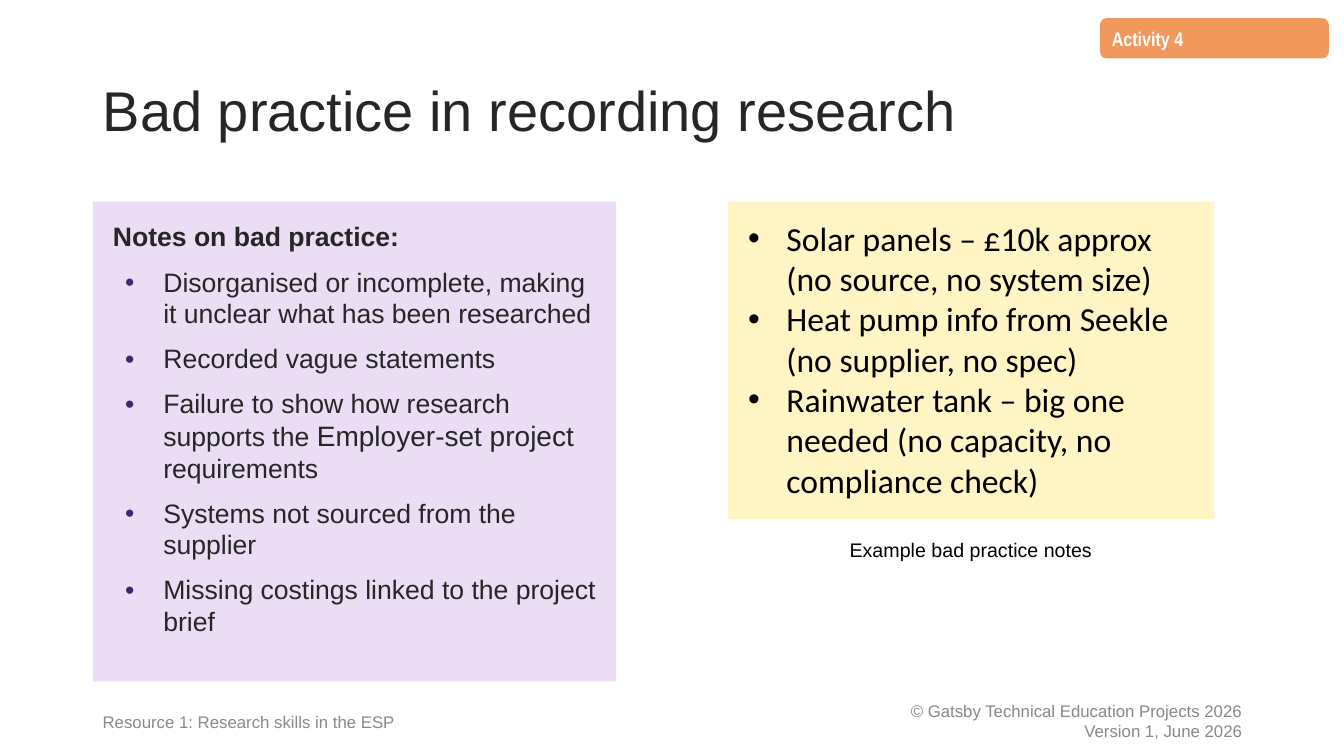
import lxml.etree
import pptx
import pptx.dml.color
import pptx.enum.shapes
import pptx.enum.text
import pptx.oxml.ns
import pptx.util

RGBColor = pptx.dml.color.RGBColor
Align = pptx.enum.text.PP_ALIGN
Anchor = pptx.enum.text.MSO_ANCHOR
Shape = pptx.enum.shapes.MSO_SHAPE

INK = RGBColor(0x26, 0x26, 0x26)
BLACK = RGBColor(0x00, 0x00, 0x00)
WHITE = RGBColor(0xFF, 0xFF, 0xFF)
GREY = RGBColor(0x88, 0x88, 0x88)
FOOTER_GREY = RGBColor(0x89, 0x89, 0x89)
LILAC = RGBColor(0xEB, 0xDD, 0xF4)
PURPLE = RGBColor(0x43, 0x26, 0x73)
ORANGE = RGBColor(0xF1, 0x99, 0x5D)
YELLOW = RGBColor(0xFF, 0xF5, 0xC4)

BAD_PRACTICE = [
    ["Disorganised or incomplete, making it unclear what has been researched"],
    ["Recorded vague statements"],
    ["Failure to show how research supports the ", "Employer-set project", " requirements"],
    ["Systems not sourced from the supplier"],
    ["Missing costings linked to the project brief"],
]
EXAMPLES = [
    "Solar panels – £10k approx (no source, no system size)",
    "Heat pump info from Seekle (no supplier, no spec)",
    "Rainwater tank – big one needed (no capacity, no compliance check)",
]


def px(count):
    """Turn whole pixels, 100 to the inch, into EMU."""
    return pptx.util.Emu(count * 9144)


class SlideBuilder:
    """Holds the text style and the slide being filled."""

    def __init__(self, slide, font="Arial"):
        """Keep the slide and its main font."""
        self.slide = slide
        self.font = font

    def place(self, box, left, top, width, height):
        """Set the position and size of a box."""
        box.left, box.top, box.width, box.height = map(px, (left, top, width, height))

    def frame(self, box, anchor=Anchor.TOP, inset=(10, 5)):
        """Set wrapping, anchor and insets of a box and return its text frame."""
        frame = box.text_frame
        frame.word_wrap = True
        frame.auto_size = pptx.enum.text.MSO_AUTO_SIZE.NONE
        frame.vertical_anchor = anchor
        frame.margin_left = frame.margin_right = px(inset[0])
        frame.margin_top = frame.margin_bottom = px(inset[1])
        return frame

    def format(self, para, size, color, bold=False, align=Align.LEFT, line=1.0, before=0, font=None):
        """Format one paragraph and its runs."""
        para.alignment = align
        para.line_spacing = line
        para.space_before = pptx.util.Pt(before)
        for span in para.runs:
            span.font.name = font or self.font
            span.font.size = pptx.util.Pt(size)
            span.font.bold = bold
            span.font.color.rgb = color

    def bullet(self, para, color=None, left=0, hanging=0):
        """Give a paragraph a coloured bullet, or none without a colour."""
        props = para._p.get_or_add_pPr()
        props.set("marL", str(px(left)))
        props.set("indent", str(px(-hanging)))
        name = pptx.oxml.ns.qn
        if color is None:
            lxml.etree.SubElement(props, name("a:buNone"))
            return
        paint = lxml.etree.SubElement(props, name("a:buClr"))
        lxml.etree.SubElement(paint, name("a:srgbClr"), val=str(color))
        lxml.etree.SubElement(props, name("a:buFont"), typeface="Arial")
        lxml.etree.SubElement(props, name("a:buChar"), char="•")

    def title(self, text, bounds):
        """Fill the title placeholder."""
        box = self.slide.shapes.title
        self.place(box, *bounds)
        frame = self.frame(box, Anchor.MIDDLE)
        frame.text = text
        self.format(frame.paragraphs[0], 40, INK, line=0.9)

    def body(self, heading, items, bounds):
        """Fill the body placeholder with a heading and a bulleted list."""
        box = self.slide.placeholders[1]
        self.place(box, *bounds)
        box.fill.solid()
        box.fill.fore_color.rgb = LILAC
        frame = self.frame(box, inset=(20, 20))
        frame.text = heading
        self.bullet(frame.paragraphs[0])
        self.format(frame.paragraphs[0], 19, INK, bold=True, line=0.98)
        for parts in items:
            para = frame.add_paragraph()
            for part in parts:
                para.add_run().text = part
            self.bullet(para, PURPLE, 50, 38)
            self.format(para, 19, INK, line=0.98, before=10)
            for emphasis in para.runs[1:2]:
                emphasis.font.size = pptx.util.Pt(20)

    def panel(self, kind, fill, bounds, inset=(10, 5)):
        """Add a filled shape and return its text frame."""
        box = self.slide.shapes.add_shape(kind, *map(px, bounds))
        box.shadow.inherit = False
        box.fill.solid()
        box.fill.fore_color.rgb = fill
        box.line.fill.background()
        return self.frame(box, inset=inset)

    def tab(self, text, bounds):
        """Add the activity tab."""
        frame = self.panel(Shape.FLOWCHART_ALTERNATE_PROCESS, ORANGE, bounds)
        frame.text = text
        self.format(frame.paragraphs[0], 14, WHITE, bold=True, line=1.08, font="Arial Narrow")

    def card(self, items, bounds):
        """Add the card of bulleted examples."""
        frame = self.panel(Shape.RECTANGLE, YELLOW, bounds, (20, 16))
        frame.text = "\n".join(items)
        for para in frame.paragraphs:
            self.bullet(para, BLACK, 38, 38)
            self.format(para, 24, BLACK, font="Calibri")

    def label(self, text, bounds, size, color, anchor=Anchor.MIDDLE, **style):
        """Add a text box with one paragraph per line."""
        box = self.slide.shapes.add_textbox(*map(px, bounds))
        frame = self.frame(box, anchor)
        frame.text = text
        for para in frame.paragraphs:
            self.format(para, size, color, **style)


def main():
    """Build the slide and save the deck."""
    deck = pptx.Presentation()
    deck.slide_width, deck.slide_height = px(1333), px(750)
    page = SlideBuilder(deck.slides.add_slide(deck.slide_layouts[1]))
    page.title("Bad practice in recording research", (92, 40, 1150, 145))
    page.body("Notes on bad practice:", BAD_PRACTICE, (92, 200, 519, 476))
    page.tab("Activity 4", (1091, 18, 227, 40))
    page.card(EXAMPLES, (722, 200, 482, 315))
    page.label("Example bad practice notes", (825, 529, 276, 34), 14, BLACK,
               Anchor.TOP, align=Align.CENTER)
    page.label("Resource 1: Research skills in the ESP", (92, 695, 460, 40), 12,
               FOOTER_GREY, line=1.08)
    page.label("© Gatsby Technical Education Projects 2026\nVersion 1, June 2026",
               (792, 695, 450, 40), 12, GREY, align=Align.RIGHT)
    deck.save("out.pptx")


if __name__ == "__main__":
    main()
